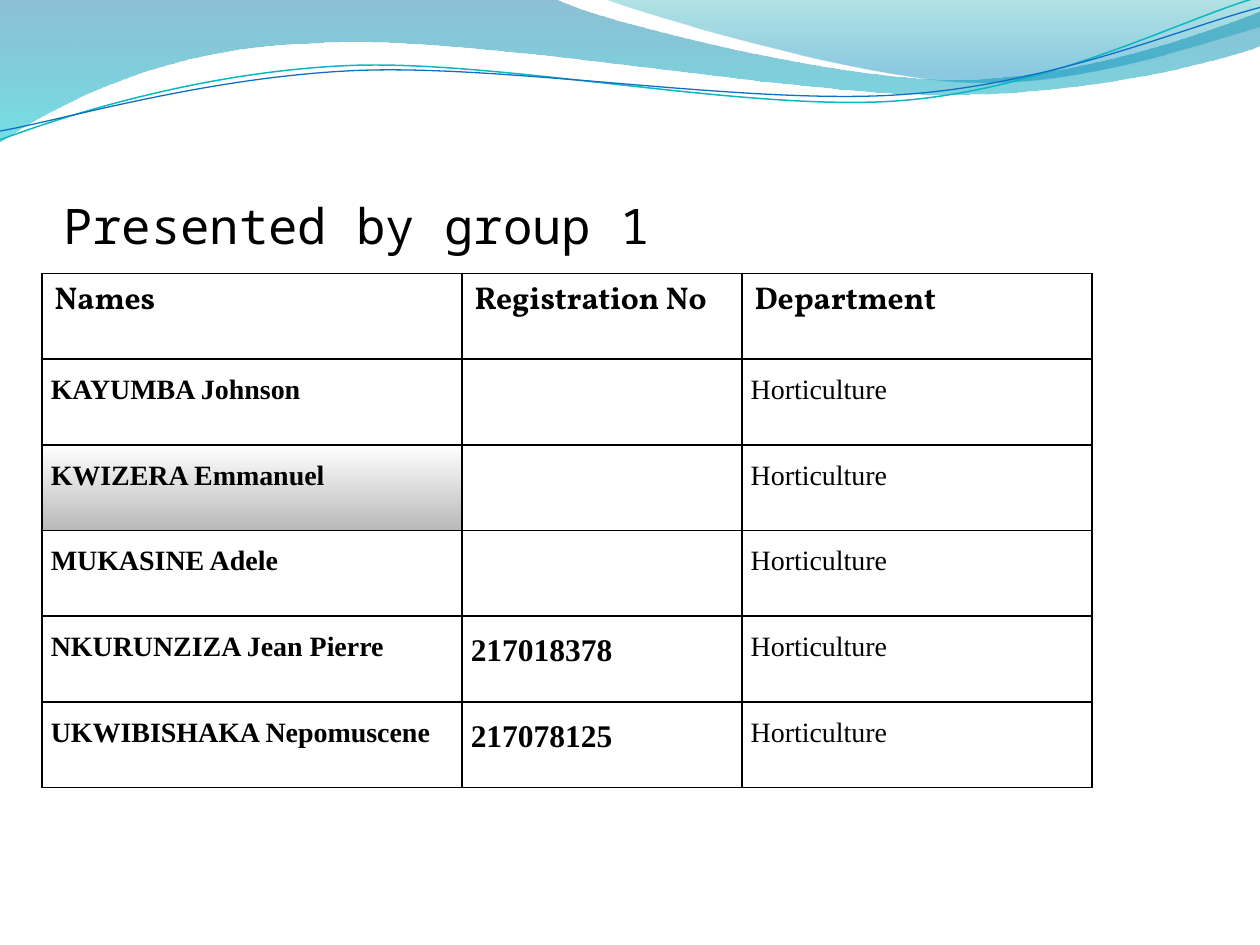
import math

import pptx
import pptx.dml.color
import pptx.enum.text
import pptx.oxml
import pptx.oxml.ns
import pptx.util
from pptx.util import Inches

COLORS = {
    "text": "000000", "border": "000000",
    "sea_top": "0074A1", "sea_bottom": "00C6CF",
    "sky_top": "00A1A9", "sky_bottom": "008BBF",
    "teal": "0AB8BF", "blue": "0F6FC6",
    "shade_top": "FFFFFF", "shade_bottom": "B9B9B9",
}
LINE_TILT = 357.3

# Wave outlines in inches: a start, then segments of one point (line)
# or three points (Bezier curve)
SEA_WAVE = [
    [(0, 0)], [(4.4, -0.01)],
    [(4.76, 0.17), (6.64, 0.63), (7.58, 0.63)],
    [(8.53, 0.63), (9.58, 0.26), (10, 0.09)],
    [(10.01, 0.36)],
    [(9.83, 0.44), (8.7, 0.76), (7.46, 0.75)],
    [(6.22, 0.75), (3.82, 0.28), (2.57, 0.34)],
    [(1.29, 0.36), (0.46, 0.83), (-0.01, 1.13)],
    [(0, 0)],
]
SKY_WAVE = [
    [(4.79, -0.01)],
    [(5.09, 0.11), (6.82, 0.62), (7.69, 0.65)],
    [(8.56, 0.69), (9.61, 0.32), (10, 0.21)],
    [(10, 0)], [(4.79, -0.01)],
]
TEAL_LINE = [
    [(0, 1.11)],
    [(0.48, 0.93), (1.58, 0.57), (2.77, 0.52)],
    [(3.95, 0.47), (5.93, 0.89), (7.13, 0.8)],
    [(8.33, 0.71), (9.38, 0.15), (9.98, -0.02)],
]
BLUE_LINE = [
    [(0, 1.04)],
    [(0.47, 0.96), (1.64, 0.61), (2.83, 0.56)],
    [(4.03, 0.51), (5.97, 0.84), (7.17, 0.75)],
    [(8.36, 0.67), (9.41, 0.21), (10, 0.06)],
]

HEADERS = ["Names", "Registration No", "Department"]
MEMBERS = [
    ("KAYUMBA Johnson", ""),
    ("KWIZERA Emmanuel", ""),
    ("MUKASINE Adele", ""),
    ("NKURUNZIZA Jean Pierre", "217018378"),
    ("UKWIBISHAKA Nepomuscene", "217078125"),
]
SHADED_MEMBER = "KWIZERA Emmanuel"


def rgb(name):
    return pptx.dml.color.RGBColor.from_string(COLORS[name])


def turn(outline, center, degrees):
    """Return the outline turned clockwise about a center."""
    cos, sin = math.cos(math.radians(degrees)), math.sin(math.radians(degrees))
    cx, cy = center
    return [[(cx + (x - cx) * cos - (y - cy) * sin, cy + (x - cx) * sin + (y - cy) * cos)
             for x, y in segment] for segment in outline]


class SlideBuilder:
    title_font = "Noto Sans Mono"
    header_font = "Vollkorn"
    body_font = "Times New Roman"

    def __init__(self, slide):
        self.slide = slide

    def gradient(self, fill, top, bottom, end=1.0):
        fill.gradient()
        fill.gradient_angle = 270
        for stop, name, position in zip(fill.gradient_stops, (top, bottom), (0, end)):
            stop.color.rgb = rgb(name)
            stop.position = position

    def outline(self, shapes, outline, close):
        points = [(Inches(x), Inches(y)) for segment in outline for x, y in segment]
        builder = shapes.build_freeform(*points[0])
        builder.add_line_segments(points[1:], close=close)
        shape = builder.convert_to_shape()
        shape.shadow.inherit = False
        # Turn each run of three control points into one curve
        lines = iter(list(shape.element.iter(pptx.oxml.ns.qn("a:lnTo"))))
        for segment in outline[1:]:
            steps = [next(lines) for _ in segment]
            if len(steps) == 3:
                curve = steps[0].makeelement(pptx.oxml.ns.qn("a:cubicBezTo"), {})
                steps[0].addprevious(curve)
                for step in steps:
                    curve.append(step[0])
                    step.getparent().remove(step)
        return shape

    def wave(self, outline, top, bottom, opacities, end=1.0):
        shape = self.outline(self.slide.shapes, outline, True)
        shape.line.fill.background()
        self.gradient(shape.fill, top, bottom, end)
        colors = shape.element.spPr.iter(pptx.oxml.ns.qn("a:srgbClr"))
        for color, opacity in zip(list(colors), opacities):
            color.append(color.makeelement(
                pptx.oxml.ns.qn("a:alpha"), {"val": str(opacity * 1000)}))

    def wave_line(self, group, outline, center, color, width):
        level = turn(outline, center, 360 - LINE_TILT)
        shape = self.outline(group.shapes, level, False)
        shape.rotation = LINE_TILT
        shape.fill.background()
        shape.line.color.rgb = rgb(color)
        shape.line.width = pptx.util.Pt(width)

    def format_text(self, paragraph, font, size, bold=False):
        for run in paragraph.runs:
            run.font.name = font
            run.font.size = pptx.util.Pt(size)
            run.font.bold = bold
            run.font.color.rgb = rgb("text")

    def title(self, text, left, top, width, height):
        title = self.slide.shapes.title
        title.left, title.top = Inches(left), Inches(top)
        title.width, title.height = Inches(width), Inches(height)
        frame = title.text_frame
        frame.text = text
        frame.word_wrap = True
        frame.auto_size = pptx.enum.text.MSO_AUTO_SIZE.NONE
        frame.vertical_anchor = pptx.enum.text.MSO_ANCHOR.BOTTOM
        frame.margin_left = frame.margin_right = frame.margin_bottom = 0
        frame.margin_top = Inches(0.05)
        frame.paragraphs[0].alignment = pptx.enum.text.PP_ALIGN.LEFT
        self.format_text(frame.paragraphs[0], self.title_font, 28)
        # Bring the title in front of the waves
        title.element.getparent().append(title.element)

    def borders(self, cell):
        properties = cell._tc.get_or_add_tcPr()
        for index, side in enumerate("LRTB"):
            properties.insert(index, pptx.oxml.parse_xml(
                f'<a:ln{side} {pptx.oxml.ns.nsdecls("a")} w="12700"><a:solidFill>'
                f'<a:srgbClr val="{COLORS["border"]}"/></a:solidFill></a:ln{side}>'))

    def body_cell(self, cell, size, bold):
        cell.margin_left = cell.margin_right = Inches(0.07)
        cell.margin_top = cell.margin_bottom = 0
        paragraph = cell.text_frame.paragraphs[0]
        paragraph.alignment = pptx.enum.text.PP_ALIGN.JUSTIFY
        paragraph.line_spacing = 1.5
        self.format_text(paragraph, self.body_font, size, bold)

    def table(self, rows, left, top, widths, row_height):
        table = self.slide.shapes.add_table(
            len(rows), len(widths), Inches(left), Inches(top),
            Inches(sum(widths)), Inches(row_height * len(rows))).table
        table.first_row = table.horz_banding = False
        for column, width in zip(table.columns, widths):
            column.width = Inches(width)
        for r, row in enumerate(rows):
            for c, text in enumerate(row):
                cell = table.cell(r, c)
                cell.text_frame.text = text
                if r == 0:
                    self.format_text(
                        cell.text_frame.paragraphs[0], self.header_font, 18, True)
                else:
                    self.body_cell(cell, 18 if c == 1 else 16, c < 2)
                if text == SHADED_MEMBER:
                    self.gradient(cell.fill, "shade_top", "shade_bottom")
                else:
                    cell.fill.background()
                self.borders(cell)


def main():
    presentation = pptx.Presentation()
    presentation.slide_width, presentation.slide_height = Inches(10), Inches(7.5)
    builder = SlideBuilder(presentation.slides.add_slide(presentation.slide_layouts[5]))

    # Waves along the top edge
    builder.wave(SEA_WAVE, "sea_top", "sea_bottom", (45, 55))
    builder.wave(SKY_WAVE, "sky_top", "sky_bottom", (30, 45), end=0.8)
    wave_lines = builder.slide.shapes.add_group_shape()
    builder.wave_line(wave_lines, TEAL_LINE, (4.99, 0.58), "teal", 0.85)
    builder.wave_line(wave_lines, BLUE_LINE, (5, 0.59), "blue", 0.75)

    # Title and group members
    builder.title("Presented by group 1", 0.5, 0.77, 9, 1.25)
    rows = [HEADERS] + [(name, number, "Horticulture") for name, number in MEMBERS]
    builder.table(rows, 1 / 3, 2.17, [10 / 3, 20 / 9, 25 / 9], 0.68)

    presentation.save("out.pptx")


if __name__ == "__main__":
    main()
